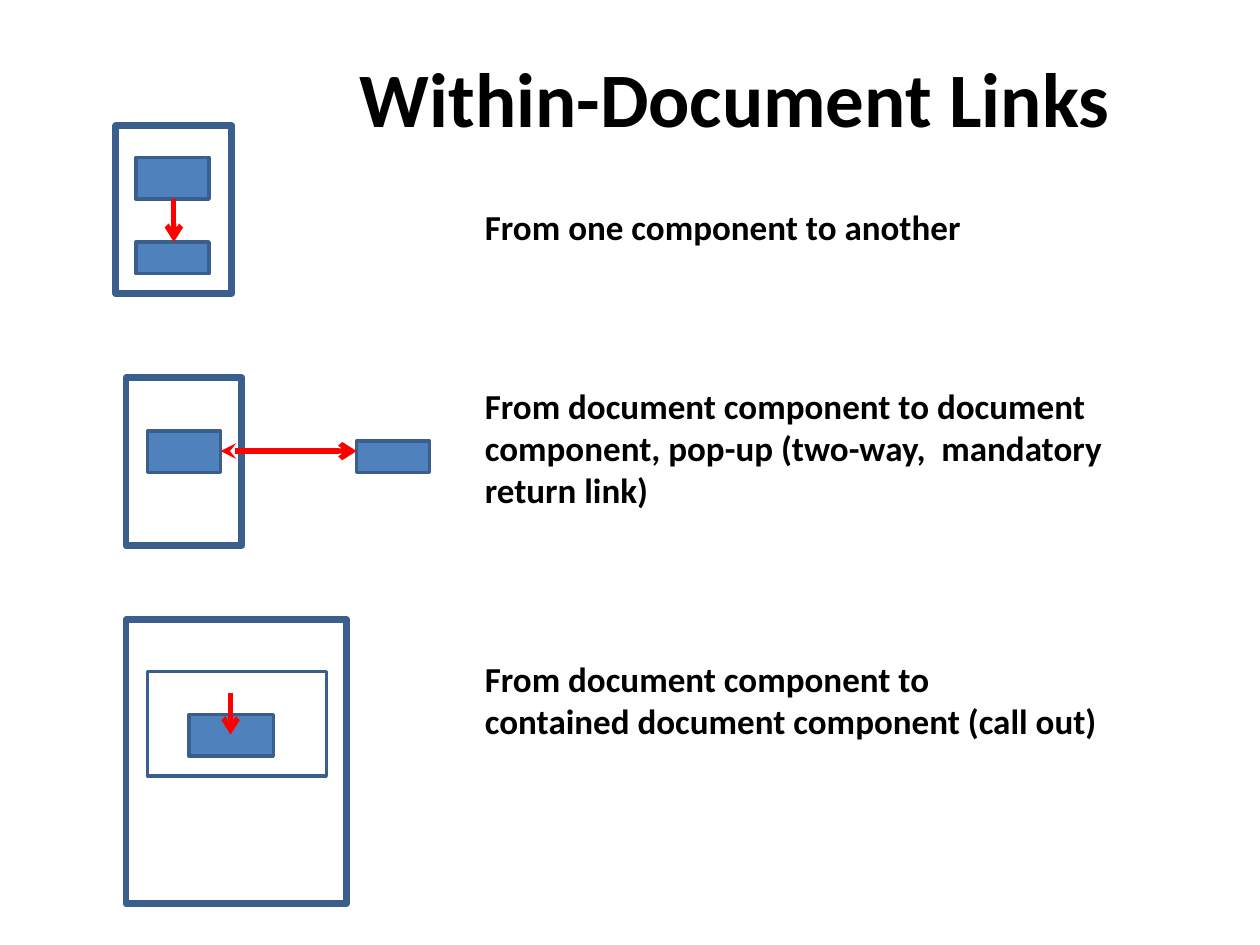
from lxml import etree
from pptx import Presentation
from pptx.dml.color import RGBColor
from pptx.enum.shapes import MSO_CONNECTOR, MSO_SHAPE
from pptx.enum.text import MSO_ANCHOR, PP_ALIGN
from pptx.oxml.ns import qn
from pptx.util import Inches, Pt

RECT = MSO_SHAPE.RECTANGLE
STRAIGHT = MSO_CONNECTOR.STRAIGHT
TOP = MSO_ANCHOR.TOP
LEFT, CENTER = PP_ALIGN.LEFT, PP_ALIGN.CENTER

FONT = "Calibri"
BLACK, BLUE, EDGE, RED = "000000", "4F81BD", "3A5F8C", "FF0000"

# Content: left, top, width, height in inches
TITLE = ("Within-Document Links", (1.92, 0.42, 7.83, 1.3))
CAPTION_LEFT = 3.75
CAPTIONS = [  # text, top, width, height
    ("From one component to another", 1.58, 4.75, 0.44),
    ("From document component to document component, pop-up "
     "(two-way,  mandatory return link)", 3, 5.67, 1.11),
    ("From document component to\vcontained document component (call out)",
     5.17, 5.67, 0.77),
]
# Each diagram: frames (box, line width), components, arrow (from, to, head)
DIAGRAMS = [
    {"frames": [((0.92, 1, 0.92, 1.33), 4)],
     "components": [(1.08, 1.25, 0.58, 0.33), (1.08, 1.92, 0.58, 0.25)],
     "arrow": ((1.38, 1.58), (1.38, 1.92), None)},
    {"frames": [((1, 3, 0.92, 1.33), 4)],
     "components": [(1.17, 3.42, 0.58, 0.33), (2.83, 3.5, 0.58, 0.25)],
     "arrow": ((1.75, 3.58), (2.83, 3.58), "stealth")},
    {"frames": [((1, 4.92, 1.75, 2.25), 4), ((1.17, 5.33, 1.42, 0.83), 2)],
     "components": [(1.5, 5.67, 0.67, 0.33)],
     "arrow": ((1.83, 5.5), (1.83, 5.83), None)},
]


def rgb(color):
    return RGBColor.from_string(color)


def add_box(s, box, width, fill=None):
    sp = s.shapes.add_shape(RECT, *map(Inches, box))
    sp.shadow.inherit = False
    if fill:
        sp.fill.solid()
        sp.fill.fore_color.rgb = rgb(fill)
    else:
        sp.fill.background()
    sp.line.color.rgb = rgb(EDGE)
    sp.line.width = Pt(width)


def add_arrow(s, start, end, head):
    cn = s.shapes.add_connector(STRAIGHT, *map(Inches, start + end))
    cn.line.color.rgb = rgb(RED)
    cn.line.width = Pt(3)
    ln = cn.line._get_or_add_ln()
    if head:
        etree.SubElement(ln, qn("a:headEnd"), type=head)
    etree.SubElement(ln, qn("a:tailEnd"), type="arrow")
    etree.SubElement(cn._element.spPr, qn("a:effectLst"))


def add_text(s, text, box, size, align=LEFT, spacing=None):
    tf = s.shapes.add_textbox(*map(Inches, box)).text_frame
    tf.word_wrap = True
    tf.vertical_anchor = TOP
    tf.text = text
    p = tf.paragraphs[0]
    p.alignment = align
    p.line_spacing = spacing
    for r in p.runs:
        r.font.name = FONT
        r.font.size = Pt(size)
        r.font.bold = True
        r.font.color.rgb = rgb(BLACK)


prs = Presentation()
prs.slide_width, prs.slide_height = Inches(10), Inches(7.5)
s = prs.slides.add_slide(prs.slide_layouts[6])

# Diagrams on the left
for diagram in DIAGRAMS:
    for box, width in diagram["frames"]:
        add_box(s, box, width)
    for box in diagram["components"]:
        add_box(s, box, 2, BLUE)
    add_arrow(s, *diagram["arrow"])

# Title and captions
add_text(s, *TITLE, 44, CENTER, 0.92)
for text, top, width, height in CAPTIONS:
    add_text(s, text, (CAPTION_LEFT, top, width, height), 20)

prs.save("out.pptx")
